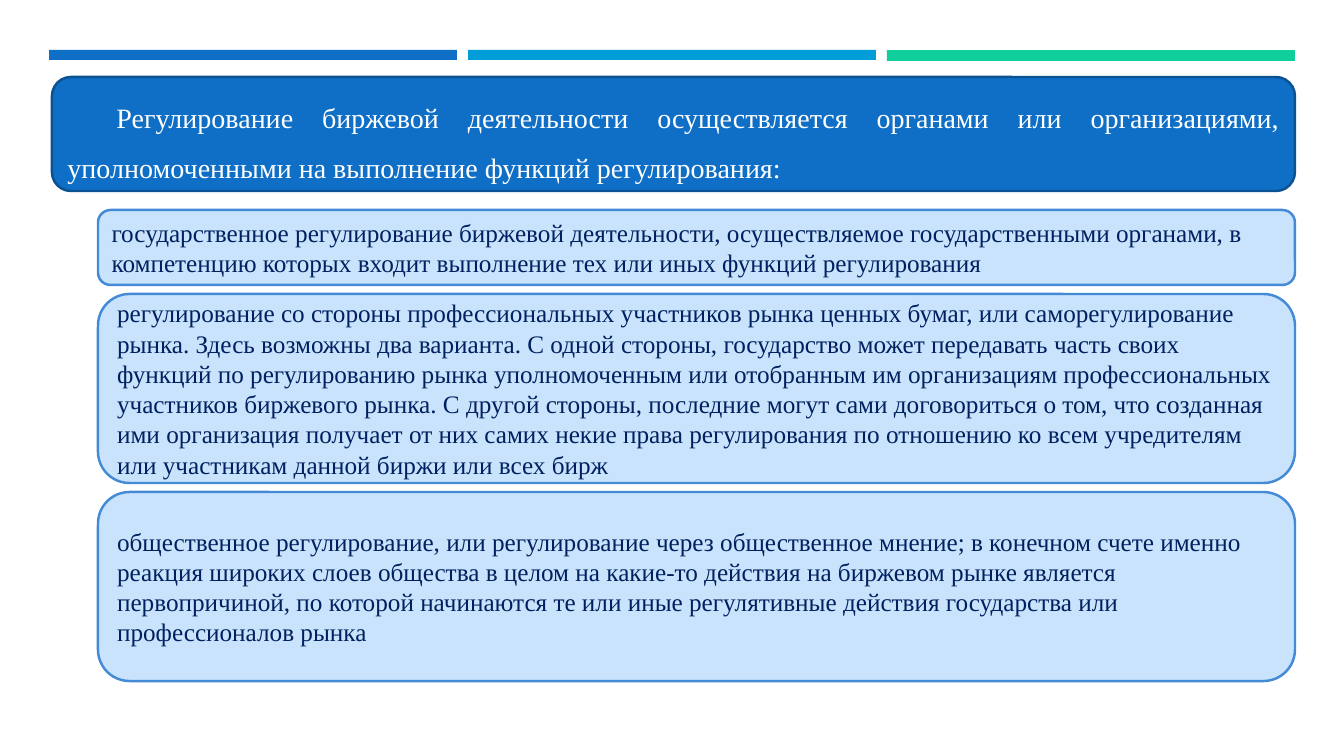
"""Build a slide on who regulates exchange trading."""
import pptx
import pptx.dml.color
import pptx.enum.shapes
import pptx.enum.text
import pptx.util

PX = 12192000 / 1344
COLORS = {
    "blue": "0F6FC6", "sky": "009DD9", "green": "10CF9B", "header_line": "0B5292",
    "item": "C8E3FB", "item_line": "448AD7", "white": "FFFFFF", "navy": "002060",
}
SHAPES = pptx.enum.shapes.MSO_SHAPE
ALIGN = pptx.enum.text.PP_ALIGN


def color(name):
    return pptx.dml.color.RGBColor.from_string(COLORS[name])


def add_block(kind, left, top, width, height, fill, line=None):
    box = [round(length * PX) for length in (left, top, width, height)]
    shape = slide.shapes.add_shape(kind, *box)
    shape.shadow.inherit = False
    shape.fill.solid()
    shape.fill.fore_color.rgb = color(fill)
    if line:
        shape.line.color.rgb = color(line)
        shape.line.width = pptx.util.Pt(1.75)
    else:
        shape.line.fill.background()
    return shape


presentation = pptx.Presentation()
presentation.slide_width = round(1344 * PX)
presentation.slide_height = round(756 * PX)
slide = presentation.slides.add_slide(presentation.slide_layouts[6])

for index, (fill, height) in enumerate([("blue", 10), ("sky", 10), ("green", 11)]):
    add_block(SHAPES.RECTANGLE, 49 + index * 419, 50, 408, height, fill)

header = add_block(SHAPES.ROUNDED_RECTANGLE, 52, 77, 1243, 114, "blue", "header_line")
header_text = (
    "Регулирование биржевой деятельности осуществляется органами или организациями, "
    "уполномоченными на выполнение функций регулирования:"
)
text_blocks = [(header, header_text, 20, "white", ALIGN.JUSTIFY)]

items = [
    (75, "государственное регулирование биржевой деятельности, осуществляемое "
         "государственными органами, в компетенцию которых входит выполнение тех или "
         "иных функций регулирования"),
    (189, "регулирование со стороны профессиональных участников рынка ценных бумаг, или "
          "саморегулирование рынка. Здесь возможны два варианта. С одной стороны, "
          "государство может передавать часть своих функций по регулированию рынка "
          "уполномоченным или отобранным им организациям профессиональных участников "
          "биржевого рынка. С другой стороны, последние могут сами договориться о том, "
          "что созданная ими организация получает от них самих некие права регулирования "
          "по отношению ко всем учредителям или участникам данной биржи или всех бирж"),
    (189, "общественное регулирование, или регулирование через общественное мнение; в "
          "конечном счете именно реакция широких слоев общества в целом на какие-то "
          "действия на биржевом рынке является первопричиной, по которой начинаются те "
          "или иные регулятивные действия государства или профессионалов рынка"),
]
top = 210
for height, text in items:
    item = add_block(SHAPES.ROUNDED_RECTANGLE, 98, top, 1197, height, "item", "item_line")
    text_blocks.append((item, text, 18, "navy", ALIGN.LEFT))
    top += height + 9

for shape, text, size, text_color, alignment in text_blocks:
    frame = shape.text_frame
    frame.text = text
    frame.word_wrap = True
    frame.vertical_anchor = pptx.enum.text.MSO_ANCHOR.MIDDLE
    paragraph = frame.paragraphs[0]
    paragraph.alignment = alignment
    font = paragraph.runs[0].font
    font.name = "Times New Roman"
    font.size = pptx.util.Pt(size)
    font.color.rgb = color(text_color)

header_paragraph = header.text_frame.paragraphs[0]
header_paragraph.line_spacing = 1.5
header_paragraph._p.get_or_add_pPr().set("indent", str(round(49 * PX)))

presentation.save("out.pptx")
